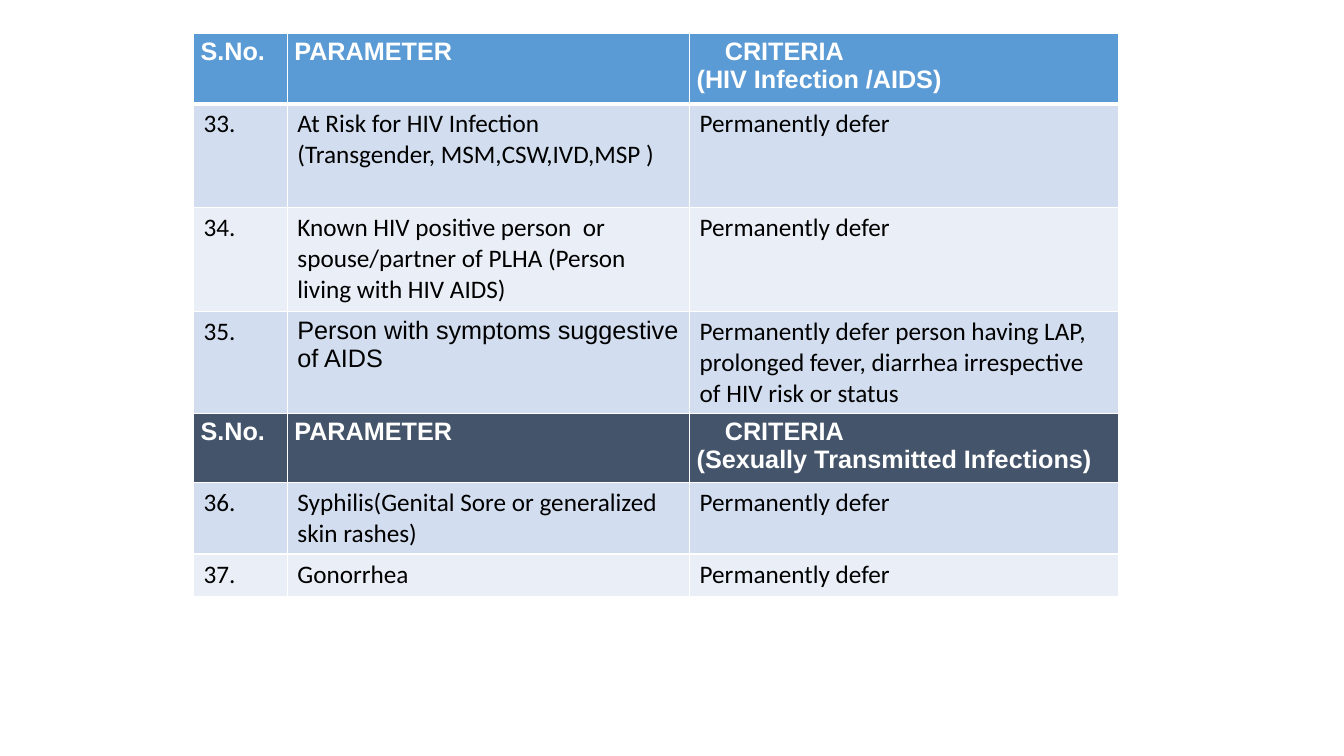
from lxml.etree import SubElement
from pptx import Presentation
from pptx.dml.color import RGBColor
from pptx.oxml.ns import qn
from pptx.util import Inches, Pt

COLUMN_WIDTHS = [0.93, 3.99, 4.25]
SECTIONS = [
    ("5B9BD5", 0.7, "(HIV Infection /AIDS)", [
        (1.03, "33.", "At Risk for HIV Infection\n(Transgender, MSM,CSW,IVD,MSP )",
         "Permanently defer"),
        (1.03, "34.", "Known HIV positive person  or spouse/partner of PLHA "
         "(Person living with HIV AIDS)", "Permanently defer"),
        (1.0, "35.", "Person with symptoms suggestive of AIDS",
         "Permanently defer person having LAP, prolonged fever, diarrhea "
         "irrespective of HIV risk or status"),
    ]),
    ("44546A", 0.68, "(Sexually Transmitted Infections)", [
        (0.7, "36.", "Syphilis(Genital Sore or generalized skin rashes)",
         "Permanently defer"),
        (0.42, "37.", "Gonorrhea", "Permanently defer"),
    ]),
]
BANDS = ["D2DEEF", "EAEFF7"]
ARIAL_TEXTS = {"Person with symptoms suggestive of AIDS"}


def color(code):
    """Return the colour for a hex string."""
    return RGBColor.from_string(code)


def add_borders(cell, top, bottom):
    """Draw white borders round a cell, with top and bottom widths in points."""
    properties = cell._tc.get_or_add_tcPr()
    for side, width in (("L", 1), ("R", 1), ("T", top), ("B", bottom)):
        line = SubElement(properties, qn(f"a:ln{side}"), w=str(Pt(width)))
        solid = SubElement(line, qn("a:solidFill"))
        SubElement(solid, qn("a:srgbClr"), val="FFFFFF")


def style_cell(cell, text, fill, is_header):
    """Fill a cell and write its text as a heading or as a body entry."""
    cell.fill.solid()
    cell.fill.fore_color.rgb = color(fill)
    if is_header:
        cell.margin_left = cell.margin_right = Inches(0.07)
        cell.margin_top = cell.margin_bottom = Inches(0.04)
    cell.text = text
    for paragraph in cell.text_frame.paragraphs:
        font = paragraph.font
        font.name = "Arial" if is_header or text in ARIAL_TEXTS else "Calibri"
        font.size = Pt(18)
        font.bold = is_header
        font.color.rgb = color("FFFFFF" if is_header else "000000")
        if paragraph.text == "CRITERIA":
            paragraph._p.get_or_add_pPr().set("marL", str(Inches(0.28)))


def deferral_rows():
    """List the rows as height, fill, heading flag and texts."""
    rows = []
    for header_fill, header_height, topic, entries in SECTIONS:
        titles = ["S.No.", "PARAMETER", f"CRITERIA\n{topic}"]
        rows.append((header_height, header_fill, True, titles))
        for index, (height, *texts) in enumerate(entries):
            rows.append((height, BANDS[index % 2], False, texts))
    return rows


def add_deferral_table(slide, left, top):
    """Place the donor deferral table with its corner at left, top."""
    rows = deferral_rows()
    table = slide.shapes.add_table(
        len(rows), len(COLUMN_WIDTHS), Inches(left), Inches(top),
        Inches(sum(COLUMN_WIDTHS)), Inches(sum(row[0] for row in rows))).table
    for column, width in zip(table.columns, COLUMN_WIDTHS):
        column.width = Inches(width)
    for index, (height, fill, is_header, texts) in enumerate(rows):
        table.rows[index].height = Inches(height)
        for cell, text in zip(table.rows[index].cells, texts):
            add_borders(cell, 3 if index == 1 else 1, 3 if index == 0 else 1)
            style_cell(cell, text, fill, is_header)


def main():
    """Build the slide and save it."""
    presentation = Presentation()
    presentation.slide_width = Inches(13.33)
    presentation.slide_height = Inches(7.5)
    slide = presentation.slides.add_slide(presentation.slide_layouts[6])
    add_deferral_table(slide, 1.92, 0.33)
    presentation.save("out.pptx")


if __name__ == "__main__":
    main()
